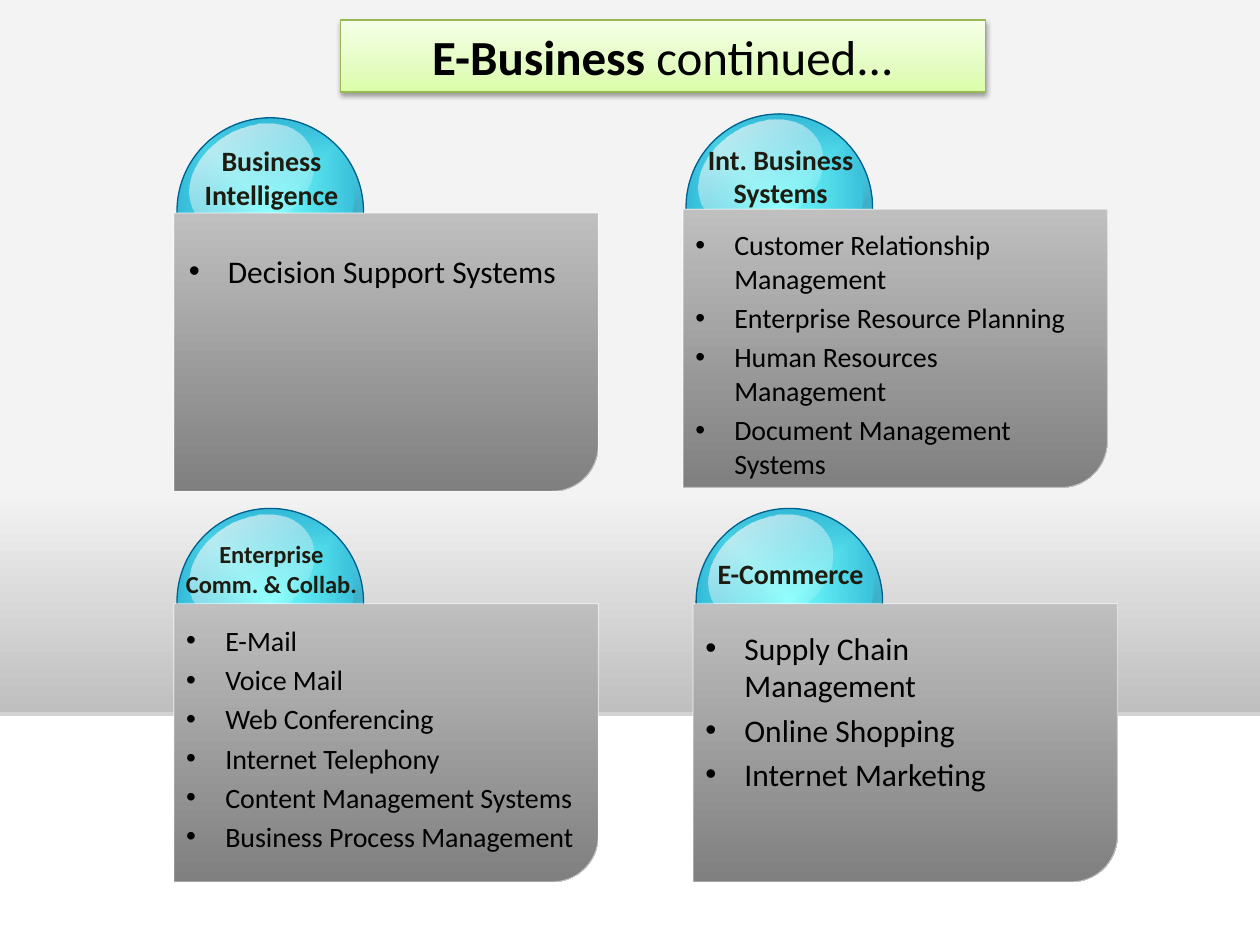
from dataclasses import dataclass
from typing import Optional

import pptx
import pptx.dml.color
import pptx.enum.shapes
import pptx.enum.text
import pptx.oxml
import pptx.oxml.ns
import pptx.util

SHAPE = pptx.enum.shapes.MSO_SHAPE
CENTER = pptx.enum.text.PP_ALIGN.CENTER
NAMESPACE = pptx.oxml.ns.nsdecls("a")
qn = pptx.oxml.ns.qn

# The slide is a grid of 100 columns by 75 rows of equal square cells.
COLUMNS, ROWS = 100, 75
CELL = pptx.util.Inches(10) / COLUMNS

COLORS = {
    "black": "000000", "white": "FFFFFF", "ink": "1E1C11",
    "wall": "F3F3F3", "silver": "BFBFBF", "gray": "808080",
    "aqua": "74FFFD", "teal": "20A6CD", "navy": "00618E", "cream": "FFFCF9",
    "lime": "DAFDA7", "pale_lime": "E4FCC2", "mist_lime": "F5FFE7",
    "olive": "98B955",
}


@dataclass(frozen=True)
class Stop:
    position: int
    color: str
    alpha: int = 100


@dataclass(frozen=True)
class Look:
    """Gradient fill (radial when angle is None), outline and shadow."""
    stops: tuple[Stop, ...]
    angle: Optional[int] = None
    line: Optional[str] = None
    line_alpha: int = 100
    shadow: Optional[tuple[str, int, float, float]] = None  # colour, alpha, blur, distance


@dataclass(frozen=True)
class Part:
    """A piece of a card, placed relative to the card's panel."""
    preset: SHAPE
    area: tuple[float, float, float, float]
    rotation: float
    look: Look


@dataclass(frozen=True)
class Card:
    left: float
    top: float
    label: tuple[str, ...]
    label_area: tuple[float, float, float]  # top offset, width, height
    label_size: int
    items: tuple[str, ...]
    items_area: tuple[float, float, float, float]
    items_size: int


FLOOR = Look((Stop(0, "wall"), Stop(69, "wall"), Stop(100, "silver")), 90,
             shadow=("gray", 35, 0, 1.8))
BANNER = Look((Stop(0, "lime"), Stop(35, "pale_lime"), Stop(100, "mist_lime")), 270,
              "olive", shadow=("black", 38, 3.1, 1.6))
BALL = (
    Part(SHAPE.OVAL, (0.25, -7.55, 14.8, 14.8), 338.6,
         Look((Stop(0, "aqua"), Stop(100, "teal")), line="navy")),
    Part(SHAPE.MOON, (6.7, -4.2, 6.5, 14.4), 53.6,
         Look((Stop(24, "black", 24), Stop(100, "white", 0)))),
    Part(SHAPE.OVAL, (0.9, -6.7, 10.5, 7.8), 329.4,
         Look((Stop(0, "cream", 77), Stop(100, "white", 0)), 90)),
)
PANEL = Part(SHAPE.ROUND_1_RECTANGLE, (0, 0, 33.7, 22.1), 180,
             Look((Stop(0, "silver"), Stop(99, "gray")), 270, "white", 47))
LABEL_CENTER = 7.75

CARDS = (
    Card(13.8, 16.9, ("Business Intelligence",), (-6, 14.2, 6.4), 16,
         ("Decision Support Systems",), (0.2, 2.6, 32.3, 4), 18),
    Card(54.2, 16.6, ("Int. Business Systems",), (-5.8, 14.2, 6.4), 16,
         ("Customer Relationship Management", "Enterprise Resource Planning",
          "Human Resources Management", "Document Management Systems"),
         (0, 1, 33.7, 21.5), 16),
    Card(13.8, 47.9, ("Enterprise", "Comm. & Collab."), (-5.6, 16.6, 5.7), 14,
         ("E-Mail", "Voice Mail", "Web Conferencing", "Internet Telephony",
          "Content Management Systems", "Business Process Management"),
         (0, 1.1, 33.7, 19.9), 16),
    Card(55, 47.9, ("E-Commerce",), (-4.2, 14.2, 3.7), 16,
         ("Supply Chain Management", "Online Shopping", "Internet Marketing"),
         (0, 1.5, 32.3, 14.3), 18),
)


def cells(*counts: float) -> list[pptx.util.Emu]:
    return [pptx.util.Emu(round(count * CELL)) for count in counts]


def color_xml(name: str, alpha: int) -> str:
    return f'<a:srgbClr val="{COLORS[name]}"><a:alpha val="{alpha * 1000}"/></a:srgbClr>'


def gradient_xml(look: Look) -> str:
    stops = "".join(f'<a:gs pos="{stop.position * 1000}">{color_xml(stop.color, stop.alpha)}</a:gs>'
                    for stop in look.stops)
    if look.angle is None:
        course = ('<a:path path="shape"><a:fillToRect l="50000" t="50000" '
                  'r="50000" b="50000"/></a:path>')
    else:
        course = f'<a:lin ang="{look.angle * 60000}" scaled="0"/>'
    return f'<a:gradFill {NAMESPACE} rotWithShape="1"><a:gsLst>{stops}</a:gsLst>{course}</a:gradFill>'


def add_shape(shapes, preset: SHAPE, area: tuple, look: Look):
    shape = shapes.add_shape(preset, *cells(*area))
    shape.shadow.inherit = False
    properties = shape._element.spPr
    gradient = pptx.oxml.parse_xml(gradient_xml(look))
    properties.find(qn("a:prstGeom")).addnext(gradient)
    if look.line is None:
        shape.line.fill.background()
    else:
        shape.line.width = pptx.util.Pt(0.75)
        shape.line.color.rgb = pptx.dml.color.RGBColor.from_string(COLORS[look.line])
        color = properties.find(".//" + qn("a:ln")).find(".//" + qn("a:srgbClr"))
        color.append(pptx.oxml.parse_xml(f'<a:alpha {NAMESPACE} val="{look.line_alpha * 1000}"/>'))
    if look.shadow:
        name, alpha, blur, distance = look.shadow
        properties.find(qn("a:effectLst")).append(pptx.oxml.parse_xml(
            f'<a:outerShdw {NAMESPACE} blurRad="{pptx.util.Pt(blur)}" '
            f'dist="{pptx.util.Pt(distance)}" dir="5400000" rotWithShape="0">'
            f'{color_xml(name, alpha)}</a:outerShdw>'))
    return shape


def add_part(shapes, card: Card, part: Part) -> None:
    left, top, width, height = part.area
    shape = add_shape(shapes, part.preset, (card.left + left, card.top + top, width, height),
                      part.look)
    shape.rotation = part.rotation
    shape._element.spPr.find(qn("a:xfrm")).set("flipH", "1")
    if part.preset == SHAPE.MOON:
        shape.adjustments[0] = 0.19


def add_span(para, text: str, size: int, color: str, bold: bool = False) -> None:
    span = para.add_run()
    span.text = text
    span.font.name = "Calibri"
    span.font.size = pptx.util.Pt(size)
    span.font.bold = bold
    span.font.color.rgb = pptx.dml.color.RGBColor.from_string(COLORS[color])


def make_bullet(para) -> None:
    properties = para._p.get_or_add_pPr()
    indent = pptx.util.Inches(0.31)
    properties.set("marL", str(indent))
    properties.set("indent", str(-indent))
    for xml in (f'<a:spcBef {NAMESPACE}><a:spcPct val="20000"/></a:spcBef>',
                f'<a:buFont {NAMESPACE} typeface="Arial"/>',
                f'<a:buChar {NAMESPACE} char="•"/>'):
        properties.append(pptx.oxml.parse_xml(xml))


def add_text(page, area: tuple, lines: tuple[str, ...], size: int, is_label: bool) -> None:
    frame = page.shapes.add_textbox(*cells(*area)).text_frame
    frame.word_wrap = True
    frame.auto_size = pptx.enum.text.MSO_AUTO_SIZE.SHAPE_TO_FIT_TEXT
    for index, line in enumerate(lines):
        para = frame.add_paragraph() if index else frame.paragraphs[0]
        if is_label:
            para.alignment = CENTER
        else:
            make_bullet(para)
        add_span(para, line, size, "ink" if is_label else "black", is_label)


def add_card(page, card: Card) -> None:
    ball = page.shapes.add_group_shape()
    for part in BALL:
        add_part(ball.shapes, card, part)
    add_part(page.shapes, card, PANEL)
    left, top, width, height = card.items_area
    add_text(page, (card.left + left, card.top + top, width, height),
             card.items, card.items_size, False)
    top, width, height = card.label_area
    add_text(page, (card.left + LABEL_CENTER - width / 2, card.top + top, width, height),
             card.label, card.label_size, True)


def main() -> None:
    deck = pptx.Presentation()
    deck.slide_width, deck.slide_height = cells(COLUMNS, ROWS)
    page = deck.slides.add_slide(deck.slide_layouts[6])
    add_shape(page.shapes, SHAPE.RECTANGLE, (0, 0, COLUMNS, 56.5), FLOOR)
    for card in CARDS:
        add_card(page, card)
    title = add_shape(page.shapes, SHAPE.RECTANGLE, (27, 1.6, 51.2, 5.7), BANNER)
    para = title.text_frame.paragraphs[0]
    para.alignment = CENTER
    add_span(para, "E-Business ", 28, "black", True)
    add_span(para, "continued...", 28, "black")
    deck.save("out.pptx")


if __name__ == "__main__":
    main()
